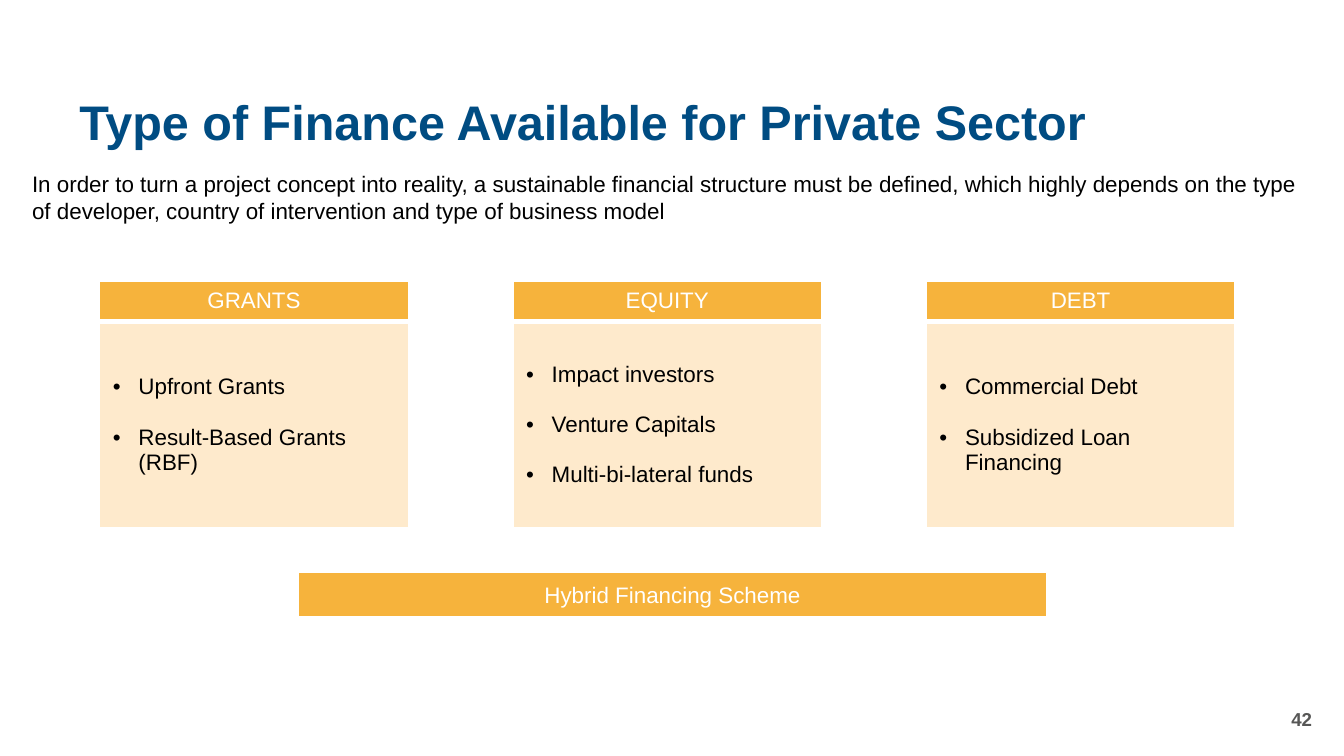
from collections import namedtuple
from dataclasses import dataclass

from lxml import etree
from pptx import Presentation
from pptx.dml.color import RGBColor
from pptx.enum.text import MSO_ANCHOR, MSO_AUTO_SIZE, PP_ALIGN
from pptx.oxml.ns import qn
from pptx.util import Inches, Pt

MIDDLE, TOP = MSO_ANCHOR.MIDDLE, MSO_ANCHOR.TOP
LEFT, CENTER, RIGHT = PP_ALIGN.LEFT, PP_ALIGN.CENTER, PP_ALIGN.RIGHT
NO_FIT = MSO_AUTO_SIZE.NONE
TITLE_ONLY = 5

Box = namedtuple("Box", "left top width height")


@dataclass(frozen=True)
class Theme:
    font: str = "Arial"
    title: str = "004C82"
    text: str = "000000"
    number: str = "575756"
    light: str = "FFFFFF"
    header: str = "F6B33C"
    body: str = "FEEACC"
    title_size: float = 26
    text_size: float = 12
    number_size: float = 10
    bullet_gap: float = 13.5
    bullet_indent: float = 0.19
    thin: float = 1
    thick: float = 3


THEME = Theme()
SLIDE_WIDTH = 10
SLIDE_HEIGHT = SLIDE_WIDTH * 9 / 16
TITLE = Box(0.49, 0.63, 9.37, 0.59)
INTRO = Box(0.14, 1.22, 9.72, 0.5)
COLUMNS = Box(0.74, 2.09, 8.45, 1.84)
HYBRID = Box(2.22, 4.26, 5.57, 0.34)
NUMBER = Box(7.61, 5.2, 2.25, 0.3)
COLUMN_WIDTH = 2.3
HEADER_HEIGHT = 0.3

FINANCE_TYPES = [
    ("GRANTS", ["Upfront Grants", "Result-Based Grants (RBF)"]),
    ("EQUITY", ["Impact investors", "Venture Capitals", "Multi-bi-lateral funds"]),
    ("DEBT", ["Commercial Debt", "Subsidized Loan Financing"]),
]


def emu(box):
    return [Inches(length) for length in box]


def format_paragraph(paragraph, size, color, bold=False, align=LEFT):
    paragraph.alignment = align
    font = paragraph.font
    font.name, font.size, font.bold = THEME.font, Pt(size), bold
    font.color.rgb = RGBColor.from_string(color)


def add_bullet(paragraph):
    properties = paragraph._p.get_or_add_pPr()
    indent = Inches(THEME.bullet_indent)
    properties.set("marL", str(indent))
    properties.set("indent", str(-indent))
    etree.SubElement(properties, qn("a:buFont")).set("typeface", THEME.font)
    etree.SubElement(properties, qn("a:buChar")).set("char", "•")


def style_cell(cell, fill, bottom_width):
    cell.fill.solid()
    cell.fill.fore_color.rgb = RGBColor.from_string(fill)
    cell.vertical_anchor = MIDDLE
    properties = cell._tc.get_or_add_tcPr()
    widths = {"lnL": THEME.thin, "lnR": THEME.thin, "lnT": THEME.thin, "lnB": bottom_width}
    for position, (side, width) in enumerate(widths.items()):
        line = etree.Element(qn(f"a:{side}"), w=str(Pt(width)))
        solid = etree.SubElement(line, qn("a:solidFill"))
        etree.SubElement(solid, qn("a:srgbClr")).set("val", THEME.light)
        properties.insert(position, line)


def add_finance_table(slide, box, heading, items=()):
    row_count = 2 if items else 1
    table = slide.shapes.add_table(row_count, 1, *emu(box)).table
    header = table.cell(0, 0)
    header.text = heading
    style_cell(header, THEME.header, THEME.thick)
    format_paragraph(header.text_frame.paragraphs[0], THEME.text_size, THEME.light, align=CENTER)
    if not items:
        return
    table.rows[0].height = Inches(HEADER_HEIGHT)
    table.rows[1].height = Inches(box.height - HEADER_HEIGHT)
    body = table.cell(1, 0)
    body.text = "\n".join(items)
    style_cell(body, THEME.body, THEME.thin)
    for index, paragraph in enumerate(body.text_frame.paragraphs):
        if index:
            paragraph.space_before = Pt(THEME.bullet_gap)
        add_bullet(paragraph)
        format_paragraph(paragraph, THEME.text_size, THEME.text)


def add_finance_columns(slide, box):
    pitch = (box.width - COLUMN_WIDTH) / (len(FINANCE_TYPES) - 1)
    for index, (heading, items) in enumerate(FINANCE_TYPES):
        column = Box(box.left + index * pitch, box.top, COLUMN_WIDTH, box.height)
        add_finance_table(slide, column, heading, items)


def place_title(slide, box, text):
    title = slide.shapes.title
    title.left, title.top, title.width, title.height = emu(box)
    frame = title.text_frame
    frame.text = text
    frame.auto_size, frame.vertical_anchor = NO_FIT, MIDDLE
    paragraph = frame.paragraphs[0]
    paragraph.line_spacing = 0.9
    format_paragraph(paragraph, THEME.title_size, THEME.title, bold=True)


def add_text(slide, box, text, size, color, bold=False, align=LEFT, anchor=TOP):
    frame = slide.shapes.add_textbox(*emu(box)).text_frame
    frame.text = text
    frame.word_wrap, frame.vertical_anchor = True, anchor
    format_paragraph(frame.paragraphs[0], size, color, bold, align)


def main():
    presentation = Presentation()
    presentation.slide_width = Inches(SLIDE_WIDTH)
    presentation.slide_height = Inches(SLIDE_HEIGHT)
    slide = presentation.slides.add_slide(presentation.slide_layouts[TITLE_ONLY])
    place_title(slide, TITLE, "Type of Finance Available for Private Sector")
    add_text(slide, NUMBER, "42", THEME.number_size, THEME.number, True, RIGHT, MIDDLE)
    add_finance_columns(slide, COLUMNS)
    add_text(
        slide, INTRO,
        "In order to turn a project concept into reality, a sustainable financial structure "
        "must be defined, which highly depends on the type of developer, country of "
        "intervention and type of business model",
        THEME.text_size, THEME.text,
    )
    add_finance_table(slide, HYBRID, "Hybrid Financing Scheme")
    presentation.save("out.pptx")


if __name__ == "__main__":
    main()
